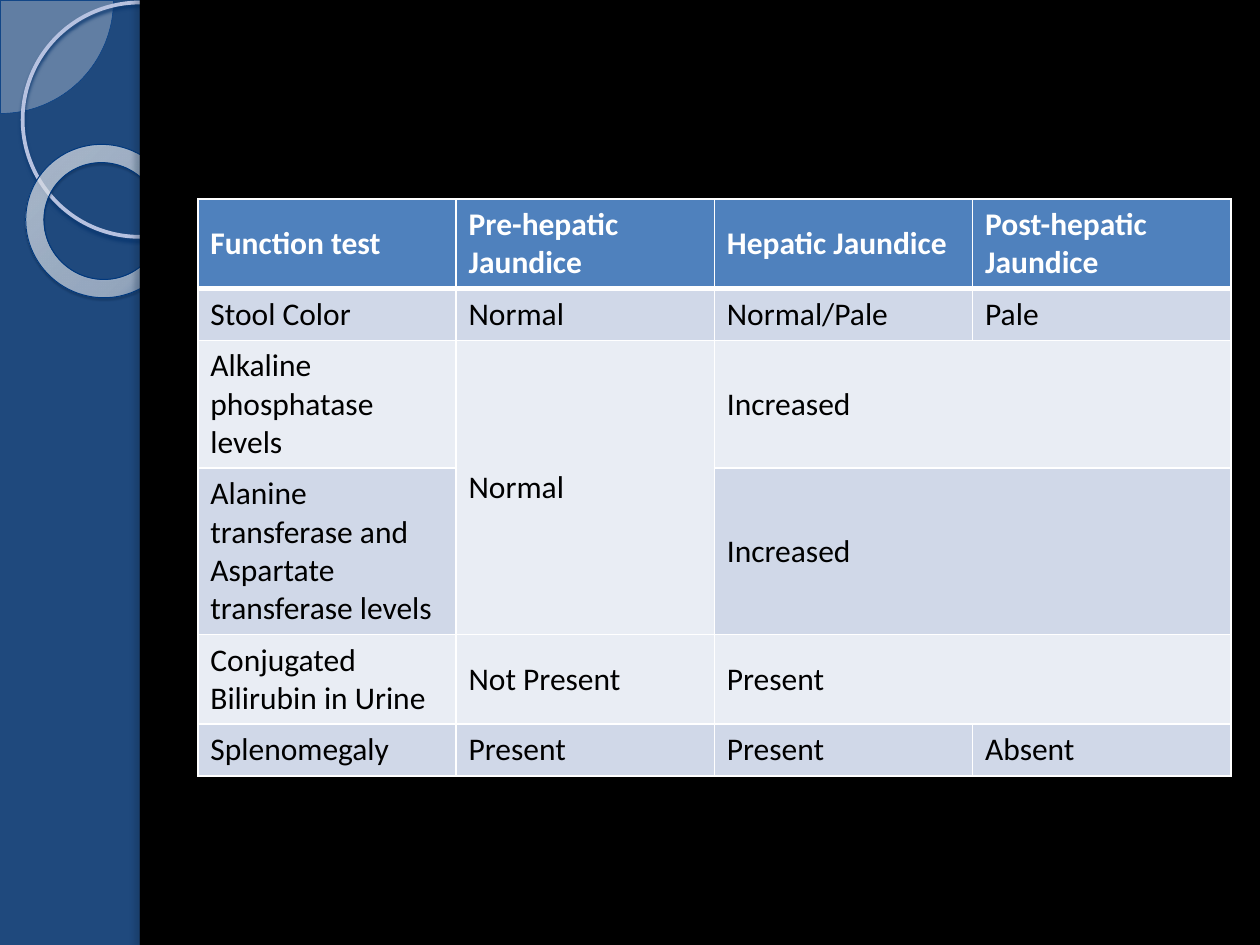
import lxml.etree
import pptx
import pptx.dml.color
import pptx.enum.shapes
import pptx.enum.text
import pptx.oxml
import pptx.oxml.ns
import pptx.util

Inches = pptx.util.Inches
Pt = pptx.util.Pt
RGBColor = pptx.dml.color.RGBColor
SHAPE = pptx.enum.shapes.MSO_SHAPE
qn = pptx.oxml.ns.qn

NAVY = RGBColor(0x1F, 0x49, 0x7D)
BLACK = RGBColor(0x00, 0x00, 0x00)
WHITE = RGBColor(0xFF, 0xFF, 0xFF)
HEADER_BLUE = RGBColor(0x4F, 0x81, 0xBD)
BAND_DARK = RGBColor(0xD0, 0xD8, 0xE8)
BAND_LIGHT = RGBColor(0xE9, 0xED, 0xF4)
PALE = RGBColor(0xE8, 0xEA, 0xF1)
PIE_EDGE = RGBColor(0x00, 0x3C, 0x86)
CIRCLE_EDGE = RGBColor(0xB7, 0xC2, 0xE0)
RING_EDGE = RGBColor(0x00, 0x38, 0x7D)
CIRCLE_SHADOW = RGBColor(0x06, 0x34, 0x6E)
RING_SHADOW = RGBColor(0x00, 0x1A, 0x39)
STRIP_SHADOW = RGBColor(0x0D, 0x24, 0x40)
RING_STOPS = [
    (0, RGBColor(0xF0, 0xF2, 0xF8), 70),
    (70, RGBColor(0xF6, 0xF8, 0xFB), 55),
    (100, RGBColor(0x00, 0x3E, 0x8A), 60),
]

ROWS = [
    ["Function test", "Pre-hepatic Jaundice", "Hepatic Jaundice", "Post-hepatic Jaundice"],
    ["Stool Color", "Normal", "Normal/Pale", "Pale"],
    ["Alkaline phosphatase levels", "Normal", "Increased", ""],
    ["Alanine transferase and Aspartate transferase levels", "", "Increased", ""],
    ["Conjugated Bilirubin in Urine", "Not Present", "Present", ""],
    ["Splenomegaly", "Present", "Present", "Absent"],
]
MERGES = [((2, 1), (3, 1))] + [((row, 2), (row, 3)) for row in (2, 3, 4)]


def add_color(parent, color, opacity=100):
    """Append a colour with its opacity in percent."""
    node = lxml.etree.SubElement(parent, qn("a:srgbClr"), val=str(color))
    if opacity < 100:
        lxml.etree.SubElement(node, qn("a:alpha"), val=str(opacity * 1000))


def add_plain_shape(slide, kind, box, fill=None, edge=None, edge_width=0):
    """Add a shape without shadow; a missing fill or edge stays empty."""
    shape = slide.shapes.add_shape(kind, *map(Inches, box))
    shape.shadow.inherit = False
    if fill is None:
        shape.fill.background()
    else:
        shape.fill.solid()
        shape.fill.fore_color.rgb = fill
    if edge is None:
        shape.line.fill.background()
    else:
        shape.line.color.rgb = edge
        shape.line.width = Pt(edge_width)
    return shape


def cast_shadow(shape, color, opacity, blur, distance, angle):
    """Give the shape an outer shadow, measured in points and degrees."""
    effects = shape._element.spPr.find(qn("a:effectLst"))
    shadow = lxml.etree.SubElement(
        effects, qn("a:outerShdw"), blurRad=str(Pt(blur)), dist=str(Pt(distance)),
        dir=str(angle * 60000), algn="tl", rotWithShape="0")
    add_color(shadow, color, opacity)


def fill_ring(ring):
    """Fill the ring with a translucent circular gradient."""
    properties = ring._element.spPr
    gradient = pptx.oxml.parse_xml(
        f'<a:gradFill {pptx.oxml.ns.nsdecls("a")} rotWithShape="1"><a:gsLst/>'
        '<a:path path="circle"><a:fillToRect l="-408000" t="-50000" r="508000" b="150000"/>'
        '</a:path></a:gradFill>')
    for position, color, opacity in RING_STOPS:
        stop = lxml.etree.SubElement(gradient[0], qn("a:gs"), pos=str(position * 1000))
        add_color(stop, color, opacity)
    properties.replace(properties.find(qn("a:noFill")), gradient)


def draw_sidebar(slide, left, top):
    """Draw the circles that decorate the blue side band."""
    pie = add_plain_shape(slide, SHAPE.PIE, (left - 0.89, top - 0.89, 1.79, 1.79),
                          PALE, PIE_EDGE, 0.25)
    pie.adjustments[0] = 0
    pie.adjustments[1] = 54.02
    pale = pie._element.spPr.find(qn("a:solidFill"))[0]
    lxml.etree.SubElement(pale, qn("a:alpha"), val="33000")

    circle = add_plain_shape(slide, SHAPE.OVAL, (left + 0.18, top + 0.02, 1.86, 1.86),
                             edge=CIRCLE_EDGE, edge_width=2.15)
    cast_shadow(circle, CIRCLE_SHADOW, 85, 2, 2, 90)

    ring = add_plain_shape(slide, SHAPE.DONUT, (left + 0.2, top + 1.15, 1.23, 1.21),
                           edge=RING_EDGE, edge_width=0.58)
    ring.adjustments[0] = 0.12
    ring.rotation = 38.6
    fill_ring(ring)
    cast_shadow(ring, RING_SHADOW, 35, 1, 1.2, 75)


def draw_panel(slide, left, top, width, height):
    """Draw the black content panel and its shaded left edge."""
    add_plain_shape(slide, SHAPE.RECTANGLE, (left, top, width, height), BLACK)
    strip = add_plain_shape(slide, SHAPE.RECTANGLE, (left, top, 0.08, height), BLACK)
    cast_shadow(strip, STRIP_SHADOW, 25, 3, 3, 180)


def add_borders(cell, top_width, bottom_width):
    """Draw white borders on the four sides of a cell."""
    properties = cell._tc.get_or_add_tcPr()
    widths = {"L": 1, "R": 1, "T": top_width, "B": bottom_width}
    for index, (side, width) in enumerate(widths.items()):
        line = lxml.etree.Element(qn(f"a:ln{side}"), w=str(Pt(width)))
        add_color(lxml.etree.SubElement(line, qn("a:solidFill")), WHITE)
        properties.insert(index, line)


def fill_cell(cell, text, row):
    """Write and style one cell according to its row."""
    header = row == 0
    cell.fill.solid()
    cell.fill.fore_color.rgb = HEADER_BLUE if header else BAND_DARK if row % 2 else BAND_LIGHT
    cell.vertical_anchor = pptx.enum.text.MSO_ANCHOR.MIDDLE
    add_borders(cell, 3 if row == 1 else 1, 3 if header else 1)
    if text:
        paragraph = cell.text_frame.paragraphs[0]
        paragraph.alignment = pptx.enum.text.PP_ALIGN.LEFT
        run = paragraph.add_run()
        run.text = text
        run.font.name = "Calibri"
        run.font.size = Pt(18)
        run.font.bold = header
        run.font.color.rgb = WHITE if header else BLACK


def draw_jaundice_table(slide, left, top, width, height):
    """Build the comparison of liver tests; rows grow with their text."""
    frame = slide.shapes.add_table(len(ROWS), len(ROWS[0]),
                                   *map(Inches, (left, top, width, height)))
    table = frame.table
    for table_row in table.rows:
        table_row.height = Inches(0.41)
    frame.height = Inches(height)
    for row, texts in enumerate(ROWS):
        for column, text in enumerate(texts):
            fill_cell(table.cell(row, column), text, row)
    for first, last in MERGES:
        table.cell(*first).merge(table.cell(*last))


def main():
    """Build the slide and save it."""
    deck = pptx.Presentation()
    deck.slide_width, deck.slide_height = Inches(10), Inches(7.5)
    slide = deck.slides.add_slide(deck.slide_layouts[6])
    slide.background.fill.solid()
    slide.background.fill.fore_color.rgb = NAVY
    draw_sidebar(slide, 0, 0)
    draw_panel(slide, 1.11, 0, 8.89, 7.5)
    draw_jaundice_table(slide, 1.57, 1.58, 8.2, 5.25)
    deck.save("out.pptx")


if __name__ == "__main__":
    main()
